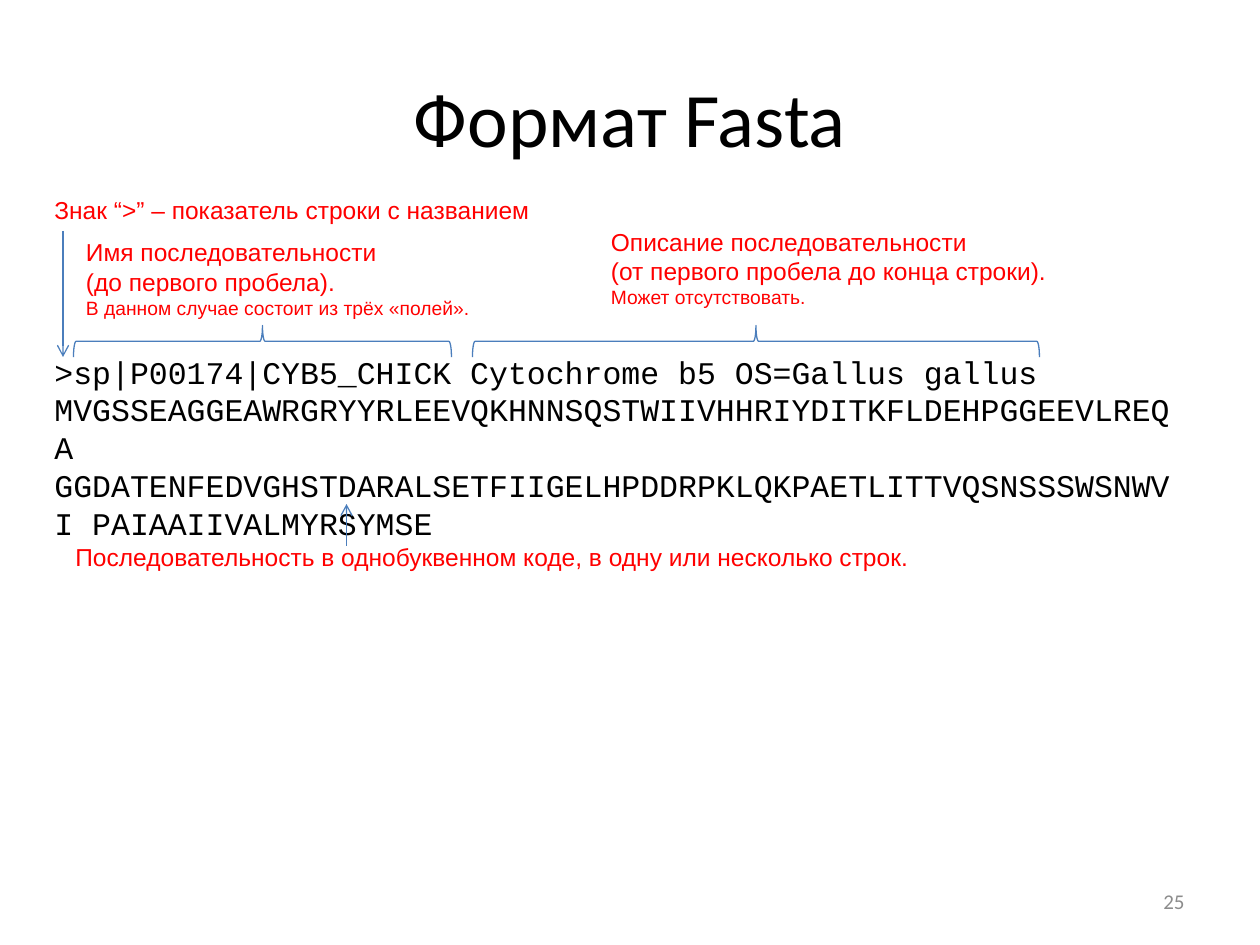
from dataclasses import dataclass

from lxml.etree import SubElement
from pptx import Presentation
from pptx.dml.color import RGBColor
from pptx.enum.shapes import MSO_CONNECTOR as Connector, MSO_SHAPE as Shape
from pptx.enum.text import MSO_ANCHOR as Anchor, PP_ALIGN as Align
from pptx.oxml.ns import qn
from pptx.slide import Slide
from pptx.util import Pt


@dataclass(frozen=True)
class Theme:
    ink: RGBColor = RGBColor(0, 0, 0)
    note: RGBColor = RGBColor(0xFF, 0, 0)
    line: RGBColor = RGBColor(0x4B, 0x7E, 0xBC)
    muted: RGBColor = RGBColor(0x8C, 0x8C, 0x8C)
    heading_font: str = "Calibri"
    note_font: str = "Arial"
    code_font: str = "Courier New"
    title_size: int = 44
    code_size: int = 18
    note_size: int = 14
    detail_size: int = 11
    number_size: int = 12
    line_width: float = 0.75


THEME = Theme()


@dataclass(frozen=True)
class Box:
    left: float
    top: float
    width: float
    height: float

    def lengths(self) -> tuple:
        return Pt(self.left), Pt(self.top), Pt(self.width), Pt(self.height)


@dataclass(frozen=True)
class Note:
    box: Box
    lines: tuple
    detail: str = ""


@dataclass(frozen=True)
class Brace:
    """Brace opening downwards over a span of the header line."""
    left: float
    span: float
    top: float = 186
    depth: float = 18


@dataclass(frozen=True)
class Arrow:
    x: float
    start: float
    end: float


NOTES = (
    Note(Box(24, 108, 378, 24.5), ("Знак “>” – показатель строки с названием",)),
    Note(Box(42, 132, 234, 55),
         ("Имя последовательности", "(до первого пробела)."),
         "В данном случае состоит из трёх «полей»."),
    Note(Box(342, 126, 270, 55),
         ("Описание последовательности", "(от первого пробела до конца строки)."),
         "Может отсутствовать."),
    Note(Box(36, 306, 606, 24.5),
         ("Последовательность в однобуквенном коде, в одну или несколько строк.",)),
)
BRACES = (Brace(42, 216), Brace(270, 324))
ARROWS = (Arrow(36, 132, 204), Arrow(198, 312, 288))
RECORD = (
    ">sp|P00174|CYB5_CHICK Cytochrome b5 OS=Gallus gallus "
    "MVGSSEAGGEAWRGRYYRLEEVQKHNNSQSTWIIVHHRIYDITKFLDEHPGGEEVLREQA "
    "GGDATENFEDVGHSTDARALSETFIIGELHPDDRPKLQKPAETLITTVQSNSSSWSNWVI "
    "PAIAAIIVALMYRSYMSE"
)


def style_run(r, font: str, size: float, color: RGBColor) -> None:
    r.font.name = font
    r.font.size = Pt(size)
    r.font.color.rgb = color


def add_text(s: Slide, box: Box, text: str, font: str, size: float, color: RGBColor):
    tf = s.shapes.add_textbox(*box.lengths()).text_frame
    tf.word_wrap = True
    tf.text = text
    for r in tf.paragraphs[0].runs:
        style_run(r, font, size, color)
    return tf


def add_note(s: Slide, note: Note) -> None:
    lines = note.lines + ((note.detail,) if note.detail else ())
    tf = add_text(s, note.box, "", THEME.note_font, THEME.note_size, THEME.note)
    p = tf.paragraphs[0]
    p.text = "\v".join(lines)
    for r in p.runs:
        size = THEME.detail_size if r.text == note.detail else THEME.note_size
        style_run(r, THEME.note_font, size, THEME.note)


def add_brace(s: Slide, brace: Brace) -> None:
    # The unrotated frame shares its centre with the visible one
    shift = (brace.span - brace.depth) / 2
    frame = Box(brace.left + shift, brace.top - shift, brace.depth, brace.span)
    sp = s.shapes.add_shape(Shape.RIGHT_BRACE, *frame.lengths())
    sp.rotation = 270
    sp.shadow.inherit = False
    sp.fill.background()
    sp.line.color.rgb = THEME.line
    sp.line.width = Pt(THEME.line_width)


def add_arrow(s: Slide, arrow: Arrow) -> None:
    x = Pt(arrow.x)
    cxn = s.shapes.add_connector(Connector.STRAIGHT, x, Pt(arrow.start), x, Pt(arrow.end))
    cxn.line.color.rgb = THEME.line
    cxn.line.width = Pt(THEME.line_width)
    SubElement(cxn.line._get_or_add_ln(), qn("a:tailEnd"), type="arrow")
    SubElement(cxn._element.spPr, qn("a:effectLst"))


def main() -> None:
    prs = Presentation()
    prs.slide_width, prs.slide_height = Pt(720), Pt(540)
    s = prs.slides.add_slide(prs.slide_layouts[5])

    # Title
    title = s.shapes.title
    title.left, title.top, title.width, title.height = Box(36, 21.6, 648, 90).lengths()
    tf = title.text_frame
    tf.text = "Формат Fasta"
    tf.vertical_anchor = Anchor.MIDDLE
    p = tf.paragraphs[0]
    p.alignment = Align.CENTER
    style_run(p.runs[0], THEME.heading_font, THEME.title_size, THEME.ink)

    # Slide number
    tf = add_text(s, Box(516, 500.5, 168, 28.75), "25",
                  THEME.heading_font, THEME.number_size, THEME.muted)
    tf.vertical_anchor = Anchor.MIDDLE
    tf.paragraphs[0].alignment = Align.RIGHT

    # Fasta record with its annotations
    add_text(s, Box(24, 198, 660, 94.5), RECORD,
             THEME.code_font, THEME.code_size, THEME.ink)
    for brace in BRACES:
        add_brace(s, brace)
    for note in NOTES:
        add_note(s, note)
    for arrow in ARROWS:
        add_arrow(s, arrow)

    prs.save("out.pptx")


if __name__ == "__main__":
    main()
